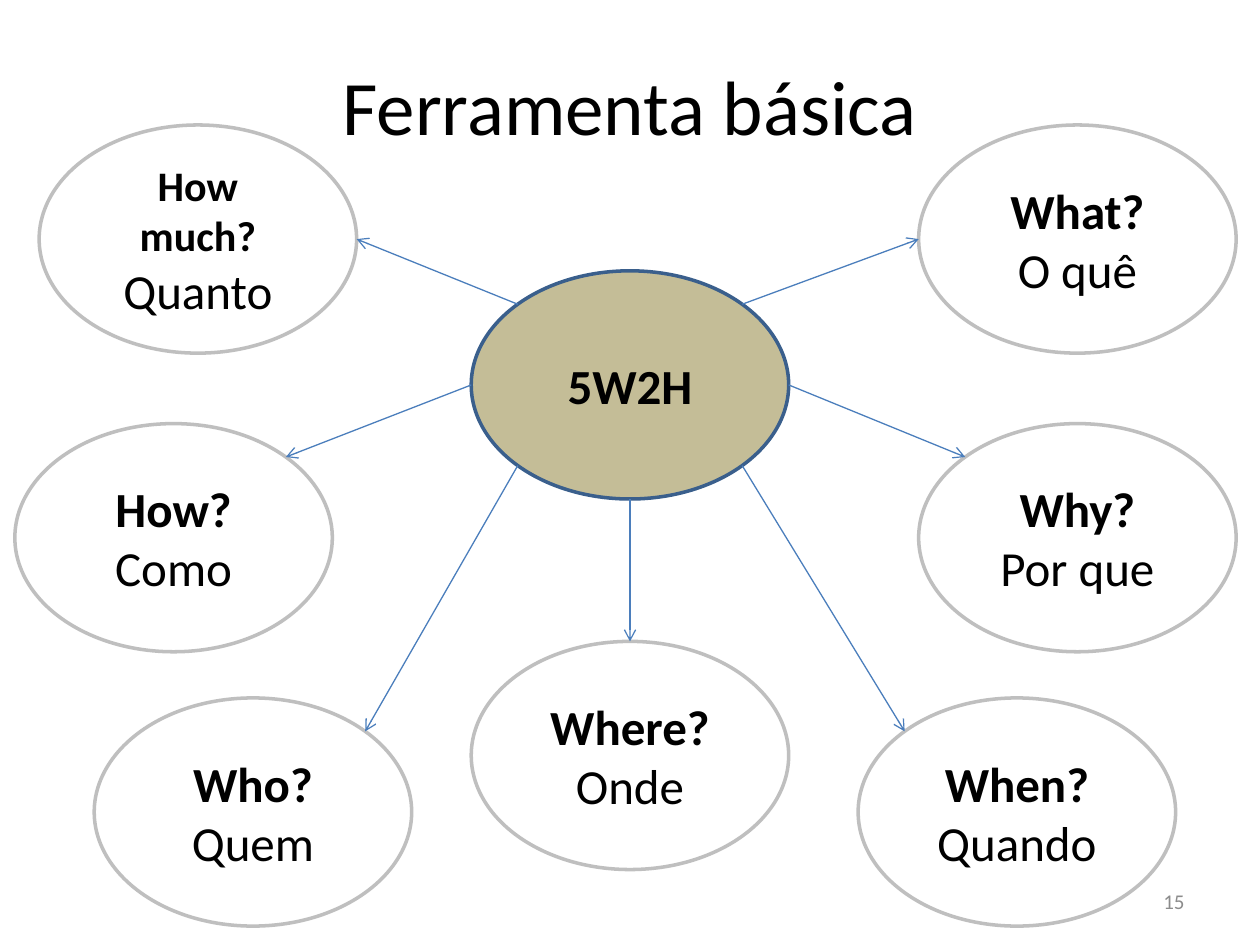
from dataclasses import dataclass
from math import cos, pi, sin

from lxml.etree import SubElement
from pptx import Presentation
from pptx.dml.color import RGBColor
from pptx.enum.shapes import MSO_CONNECTOR, MSO_SHAPE
from pptx.enum.text import MSO_ANCHOR, PP_ALIGN
from pptx.oxml.ns import qn
from pptx.util import Cm, Pt


@dataclass(frozen=True)
class Theme:
    face: str = "Calibri"
    ink: str = "000000"
    hub: str = "C4BD97"
    rim: str = "3A5F8C"
    ring: str = "BFBFBF"
    arrow: str = "4B7EBC"
    faint: str = "8C8C8C"
    head: int = 44
    body: int = 28
    small: int = 24
    note: int = 12


class Board:
    wide, high = 6.4, 4.6

    def __init__(self, slide, theme):
        self.slide = slide
        self.theme = theme

    def style(self, para, size, color, bold=False, align=PP_ALIGN.CENTER):
        para.alignment = align
        font = para.font
        font.name = self.theme.face
        font.size = Pt(size)
        font.bold = bold
        font.color.rgb = RGBColor.from_string(color)

    def title(self, text, left, top, width, height):
        shape = self.slide.shapes.title
        shape.left, shape.top = Cm(left), Cm(top)
        shape.width, shape.height = Cm(width), Cm(height)
        frame = shape.text_frame
        frame.text = text
        frame.vertical_anchor = MSO_ANCHOR.MIDDLE
        self.style(frame.paragraphs[0], self.theme.head, self.theme.ink)

    def oval(self, left, top, lines, rim, fill=None, size=None):
        shape = self.slide.shapes.add_shape(
            MSO_SHAPE.OVAL, Cm(left), Cm(top), Cm(self.wide), Cm(self.high))
        shape.shadow.inherit = False
        if fill:
            shape.fill.solid()
            shape.fill.fore_color.rgb = RGBColor.from_string(fill)
        else:
            shape.fill.background()
        shape.line.color.rgb = RGBColor.from_string(rim)
        shape.line.width = Pt(2)
        frame = shape.text_frame
        frame.word_wrap = True
        frame.vertical_anchor = MSO_ANCHOR.MIDDLE
        frame.text = "\n".join(lines)
        for spot, para in enumerate(frame.paragraphs):
            first = spot == 0
            points = size if first and size else self.theme.body
            self.style(para, points, self.theme.ink, first)
        return shape

    def site(self, shape, index):
        angle = pi / 2 + index * pi / 4
        return (round(shape.left + shape.width * (1 + cos(angle)) / 2),
                round(shape.top + shape.height * (1 - sin(angle)) / 2))

    def arrow(self, start, leave, end, reach):
        line = self.slide.shapes.add_connector(
            MSO_CONNECTOR.STRAIGHT, *self.site(start, leave), *self.site(end, reach))
        line.line.color.rgb = RGBColor.from_string(self.theme.arrow)
        line.line.width = Pt(0.75)
        props = line._element.spPr
        SubElement(props.find(qn("a:ln")), qn("a:tailEnd"), type="arrow")
        SubElement(props, qn("a:effectLst"))
        joint = line._element.find(".//" + qn("p:cNvCxnSpPr"))
        for tag, shape, index in (("a:stCxn", start, leave), ("a:endCxn", end, reach)):
            SubElement(joint, qn(tag), id=str(shape.shape_id), idx=str(index))

    def number(self, text, left, top, width, height):
        box = self.slide.shapes.add_textbox(Cm(left), Cm(top), Cm(width), Cm(height))
        frame = box.text_frame
        frame.word_wrap = True
        frame.vertical_anchor = MSO_ANCHOR.MIDDLE
        frame.text = text
        self.style(frame.paragraphs[0], self.theme.note, self.theme.faint,
                   align=PP_ALIGN.RIGHT)


def main():
    deck = Presentation()
    deck.slide_width, deck.slide_height = Cm(25.4), Cm(19.05)
    theme = Theme()
    board = Board(deck.slides.add_slide(deck.slide_layouts[5]), theme)
    board.title("Ferramenta básica", 1.27, 0.53, 22.86, 3.18)
    hub = board.oval(9.5, 5.46, ["5W2H"], theme.rim, theme.hub)

    top, mid, low = 2.52, 8.54, 14.07
    asks = [
        (0.79, top, "How much?", "Quanto", 1, 6, theme.small),
        (0.3, mid, "How?", "Como", 2, 7, None),
        (1.9, low, "Who?", "Quem", 3, 7, None),
        (9.5, 12.93, "Where?", "Onde", 4, 0, None),
        (17.3, low, "When?", "Quando", 5, 1, None),
        (18.52, mid, "Why?", "Por que", 6, 1, None),
        (18.52, top, "What?", "O quê", 7, 2, None),
    ]
    ends = []
    for left, height, ask, word, leave, reach, size in asks:
        oval = board.oval(left, height, [ask, word], theme.ring, size=size)
        ends.append((leave, oval, reach))
    for leave, oval, reach in reversed(ends):
        board.arrow(hub, leave, oval, reach)

    board.number("15", 18.2, 17.66, 5.93, 1.01)
    deck.save("out.pptx")


if __name__ == "__main__":
    main()
